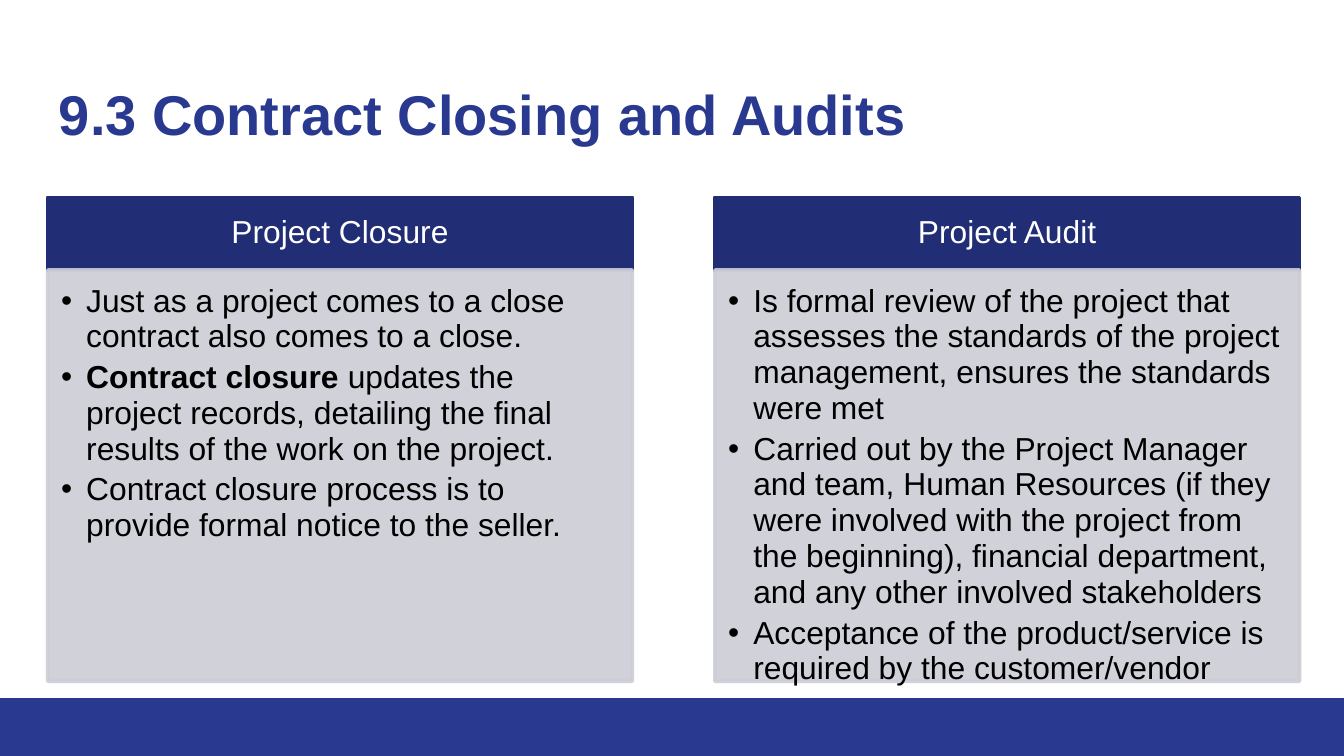
from lxml import etree
from pptx import Presentation
from pptx import util as u
from pptx.dml.color import RGBColor
from pptx.enum import shapes, text
from pptx.oxml.ns import qn

Pt = u.Pt
BLUE, NAVY, GREY = "2A3990", "212D74", "CDCDD6"
COLUMNS = [
    ("Project Closure", [
        [("Just as a project comes to a close contract also comes to a close.", False)],
        [("Contract closure ", True),
         ("updates the project records, detailing the final results of the work on the project.", False)],
        [("Contract closure process is to provide formal notice to the seller.", False)],
    ]),
    ("Project Audit", [
        [("Is formal review of the project that assesses the standards of the project "
          "management, ensures the standards were met", False)],
        [("Carried out by the Project Manager and team, Human Resources (if they were involved "
          "with the project from the beginning), financial department, and any other involved "
          "stakeholders", False)],
        [("Acceptance of the product/service is required by the customer/vendor", False)],
    ]),
]


def rgb(value):
    return RGBColor.from_string(value)


def set_alpha(fill, percent):
    color = fill._xPr.find(qn("a:solidFill"))[0]
    etree.SubElement(color, qn("a:alpha"), val=str(percent * 1000))


def add_rect(s, x, y, w, h, color, line=None, alpha=None):
    sp = s.shapes.add_shape(shapes.MSO_SHAPE.RECTANGLE, Pt(x), Pt(y), Pt(w), Pt(h))
    sp.shadow.inherit = False
    sp.fill.solid()
    sp.fill.fore_color.rgb = rgb(color)
    if line:
        sp.line.color.rgb = rgb(color)
        sp.line.width = Pt(line)
    else:
        sp.line.fill.background()
    if alpha:
        set_alpha(sp.fill, alpha)
        if line:
            set_alpha(sp.line.fill, alpha)
    return sp


def add_bullet(p, color, indent):
    pPr = p._p.get_or_add_pPr()
    pPr.set("marL", str(Pt(indent)))
    pPr.set("indent", str(-Pt(indent)))
    bu_color = etree.SubElement(pPr, qn("a:buClr"))
    etree.SubElement(bu_color, qn("a:srgbClr"), val=color)
    etree.SubElement(pPr, qn("a:buFont"), typeface="Arial")
    etree.SubElement(pPr, qn("a:buChar"), char="•")


def write(sp, paragraphs, size=17, color="000000", align=text.PP_ALIGN.LEFT,
          anchor=text.MSO_ANCHOR.TOP, insets=(7.2, 7.2, 7.2, 7.2),
          spacing=1.0, after=0, bullet=False):
    tf = sp.text_frame
    tf.word_wrap = True
    tf.vertical_anchor = anchor
    tf.margin_left, tf.margin_top, tf.margin_right, tf.margin_bottom = map(Pt, insets)
    for i, runs in enumerate(paragraphs):
        p = tf.add_paragraph() if i else tf.paragraphs[0]
        p.alignment = align
        p.line_spacing = spacing
        p.space_after = Pt(after)
        if bullet:
            add_bullet(p, color, 13.5)
        for content, bold in runs:
            r = p.add_run()
            r.text = content
            r.font.name = "Arial"
            r.font.size = Pt(size)
            r.font.bold = bold
            r.font.color.rgb = rgb(color)


def add_title(s, content):
    sp = s.shapes.add_textbox(Pt(24.5), Pt(32.4), Pt(671), Pt(47.5))
    write(sp, [[(content, True)]], size=30, color=BLUE, insets=(7.2, 10, 7.2, 4.4))


def add_column(s, x, heading, bullets):
    header = add_rect(s, x, 105.8, 313.2, 38.9, NAVY, line=2)
    write(header, [[(heading, False)]], color="FFFFFF", align=text.PP_ALIGN.CENTER,
          anchor=text.MSO_ANCHOR.MIDDLE, insets=(9.4, 5.8, 9.4, 5.8), spacing=0.9)
    body = add_rect(s, x, 144.7, 313.2, 220.3, GREY, line=2, alpha=90)
    write(body, bullets, insets=(7.2, 7.2, 9.4, 10.8), spacing=0.94, after=2.55, bullet=True)


def main():
    prs = Presentation()
    prs.slide_width, prs.slide_height = Pt(720), Pt(405)
    s = prs.slides.add_slide(prs.slide_layouts[6])
    add_rect(s, 0, 374, 720, 31, BLUE)
    add_title(s, "9.3 Contract Closing and Audits")
    for i, (heading, bullets) in enumerate(COLUMNS):
        add_column(s, 25.6 + i * 357.4, heading, bullets)
    prs.save("out.pptx")


if __name__ == "__main__":
    main()
